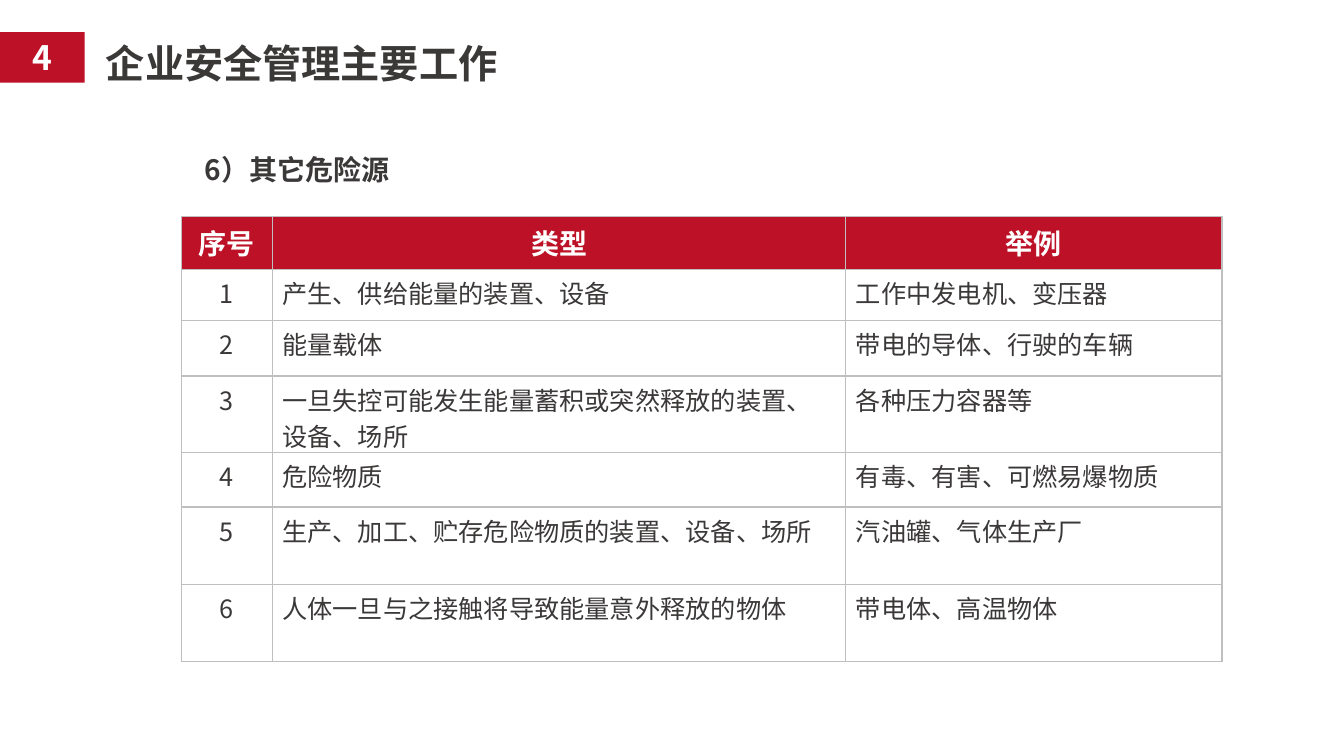
"""Build the slide on other hazard sources in enterprise safety management."""
from dataclasses import dataclass

from lxml.etree import SubElement
from pptx import Presentation
from pptx.dml.color import RGBColor
from pptx.enum.shapes import MSO_SHAPE
from pptx.enum.text import MSO_ANCHOR as Anchor, PP_ALIGN as Align
from pptx.oxml.ns import qn
from pptx.util import Inches, Pt

FONT = "Noto Sans CJK SC"
COLORS = {"red": "BD1127", "ink": "3B3838", "white": "FFFFFF", "border": "BFBFBF"}
HEADINGS = ("序号", "类型", "举例")
COLUMN_WIDTHS = (0.9, 5.69, 3.73)
HEADING_HEIGHT = 0.52


@dataclass(frozen=True)
class TextStyle:
    size: int
    color: str
    bold: bool = True
    align: Align = Align.LEFT
    space_before: float = 0


@dataclass(frozen=True)
class Hazard:
    kind: str
    example: str
    height: float


HAZARDS = (
    Hazard("产生、供给能量的装置、设备", "工作中发电机、变压器", 0.51),
    Hazard("能量载体", "带电的导体、行驶的车辆", 0.55),
    Hazard("一旦失控可能发生能量蓄积或突然释放的装置、设备、场所", "各种压力容器等", 0.76),
    Hazard("危险物质", "有毒、有害、可燃易爆物质", 0.54),
    Hazard("生产、加工、贮存危险物质的装置、设备、场所", "汽油罐、气体生产厂", 0.77),
    Hazard("人体一旦与之接触将导致能量意外释放的物体", "带电体、高温物体", 0.76),
)
HEADING_STYLE = TextStyle(20, "white", align=Align.CENTER, space_before=4)
NUMBER_STYLE = TextStyle(18, "ink", False, Align.CENTER, 3.6)
ENTRY_STYLE = TextStyle(18, "ink", False, space_before=3.6)


def rgb(name: str) -> RGBColor:
    """Return the named colour."""
    return RGBColor.from_string(COLORS[name])


def write(frame, text: str, style: TextStyle) -> None:
    """Put one styled paragraph into a text frame."""
    frame.word_wrap = True
    paragraph = frame.paragraphs[0]
    paragraph.text = text
    paragraph.alignment = style.align
    paragraph.space_before = Pt(style.space_before)
    font = paragraph.font
    font.size, font.bold, font.name = Pt(style.size), style.bold, FONT
    font.color.rgb = rgb(style.color)
    defaults = paragraph._p.pPr.find(qn("a:defRPr"))
    SubElement(defaults, qn("a:ea"), typeface=FONT)


def add_borders(cell) -> None:
    """Draw a thin line on all four sides of a cell."""
    properties = cell._tc.get_or_add_tcPr()
    for side in ("lnL", "lnR", "lnT", "lnB"):
        line = SubElement(properties, qn(f"a:{side}"), w=str(Pt(1)))
        fill = SubElement(line, qn("a:solidFill"))
        SubElement(fill, qn("a:srgbClr"), val=COLORS["border"])


def add_title(slide) -> None:
    """Place the slide title and its section number."""
    title = slide.shapes.title
    title.left, title.top = Inches(0.95), Inches(0.34)
    title.width, title.height = Inches(4.71), Inches(0.57)
    title.text_frame.vertical_anchor = Anchor.TOP
    write(title.text_frame, "企业安全管理主要工作", TextStyle(28, "ink"))

    section = slide.shapes.add_shape(
        MSO_SHAPE.RECTANGLE, Inches(0), Inches(0.32), Inches(0.84), Inches(0.5))
    section.shadow.inherit = False
    section.fill.solid()
    section.fill.fore_color.rgb = rgb("red")
    section.line.fill.background()
    section.text_frame.vertical_anchor = Anchor.TOP
    write(section.text_frame, "4", TextStyle(24, "white", align=Align.CENTER))


def add_subtitle(slide) -> None:
    """Place the heading above the table."""
    subtitle = slide.shapes.add_textbox(
        Inches(1.93), Inches(1.41), Inches(3.39), Inches(0.54))
    subtitle.text_frame.vertical_anchor = Anchor.MIDDLE
    write(subtitle.text_frame, "6）其它危险源", TextStyle(20, "ink"))


def add_hazard_table(slide) -> None:
    """Tabulate the numbered hazard sources."""
    rows = [HEADINGS] + [
        (str(number), hazard.kind, hazard.example)
        for number, hazard in enumerate(HAZARDS, 1)]
    heights = [HEADING_HEIGHT] + [hazard.height for hazard in HAZARDS]
    table = slide.shapes.add_table(
        len(rows), len(HEADINGS), Inches(1.8), Inches(2.15),
        Inches(sum(COLUMN_WIDTHS)), Inches(sum(heights))).table
    table.first_row = table.horz_banding = False
    for column, width in zip(table.columns, COLUMN_WIDTHS):
        column.width = Inches(width)
    for row_index, (texts, height) in enumerate(zip(rows, heights)):
        table.rows[row_index].height = Inches(height)
        for column_index, text in enumerate(texts):
            cell = table.cell(row_index, column_index)
            add_borders(cell)
            if row_index == 0:
                cell.fill.solid()
                cell.fill.fore_color.rgb = rgb("red")
                style = HEADING_STYLE
            else:
                cell.fill.background()
                style = ENTRY_STYLE if column_index else NUMBER_STYLE
            write(cell.text_frame, text, style)


def main() -> None:
    """Assemble and save the presentation."""
    presentation = Presentation()
    presentation.slide_width, presentation.slide_height = Inches(13.33), Inches(7.5)
    slide = presentation.slides.add_slide(presentation.slide_layouts[5])
    add_title(slide)
    add_subtitle(slide)
    add_hazard_table(slide)
    presentation.save("out.pptx")


if __name__ == "__main__":
    main()
